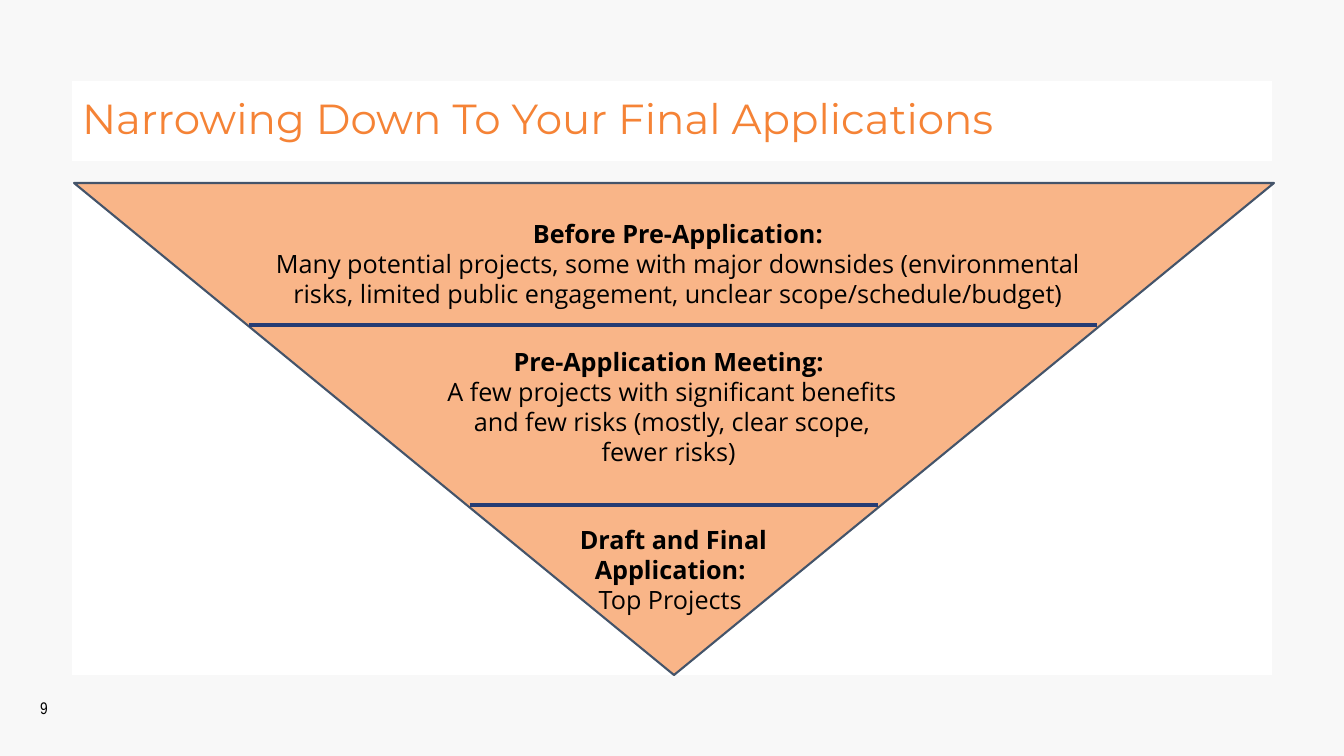
import dataclasses

import pptx
import pptx.dml.color
import pptx.enum.shapes
import pptx.enum.text
import pptx.oxml
import pptx.util

SHAPE = pptx.enum.shapes.MSO_SHAPE
ALIGN = pptx.enum.text.PP_ALIGN
ANCHOR = pptx.enum.text.MSO_ANCHOR
AUTO_SIZE = pptx.enum.text.MSO_AUTO_SIZE
EMU_PER_PX = 914400 / 100.8


@dataclasses.dataclass(frozen=True)
class Theme:
    """Colours, fonts and type sizes of the slide."""
    background: str = "F8F8F8"
    panel: str = "FFFFFF"
    heading: str = "F58336"
    funnel: str = "F9B588"
    funnel_edge: str = "44546A"
    divider: str = "263C74"
    ink: str = "000000"
    heading_font: str = "Montserrat"
    body_font: str = "Open Sans"
    number_font: str = "Arial Narrow"
    heading_size: int = 30
    body_size: int = 18
    number_size: int = 12
    edge_width: float = 1.5
    divider_width: float = 2.25


def px(*lengths):
    """Turn pixel lengths into EMU."""
    return [pptx.util.Emu(round(length * EMU_PER_PX)) for length in lengths]


def rgb(value):
    """Turn a hex string into a colour."""
    return pptx.dml.color.RGBColor.from_string(value)


class FunnelSlide:
    """Draws styled elements on the current slide."""

    def __init__(self, deck, theme):
        """Add a title-only slide with the theme background."""
        self.theme = theme
        self.slide = deck.slides.add_slide(deck.slide_layouts[5])
        self.paint(self.slide.background, theme.background)

    def paint(self, target, colour):
        """Fill a target with a solid colour."""
        target.fill.solid()
        target.fill.fore_color.rgb = rgb(colour)

    def add_words(self, paragraph, wording, font, size, colour, bold=False):
        """Add one formatted run."""
        run = paragraph.add_run()
        run.text = wording
        run.font.name = font
        run.font.size = pptx.util.Pt(size)
        run.font.bold = bold
        run.font.color.rgb = rgb(colour)

    def title(self, wording, *box):
        """Move and fill the title placeholder."""
        heading = self.slide.shapes.title
        heading.left, heading.top, heading.width, heading.height = px(*box)
        self.paint(heading, self.theme.panel)
        frame = heading.text_frame
        frame.auto_size = AUTO_SIZE.NONE
        frame.vertical_anchor = ANCHOR.MIDDLE
        line = frame.paragraphs[0]
        line.alignment = ALIGN.LEFT
        line.line_spacing = 0.9
        self.add_words(line, wording, self.theme.heading_font,
                       self.theme.heading_size, self.theme.heading)

    def shape(self, preset, colour, *box, edge=None, rotation=0):
        """Add a filled preset shape."""
        area = self.slide.shapes.add_shape(preset, *px(*box))
        area.shadow.inherit = False
        area.rotation = rotation
        self.paint(area, colour)
        if edge:
            area.line.color.rgb = rgb(edge)
            area.line.width = pptx.util.Pt(self.theme.edge_width)
        else:
            area.line.fill.background()

    def divider(self, left, right, y):
        """Add a horizontal line between two stages."""
        rule = self.slide.shapes.add_connector(
            pptx.enum.shapes.MSO_CONNECTOR.STRAIGHT, *px(left, y, right, y))
        rule.line.color.rgb = rgb(self.theme.divider)
        rule.line.width = pptx.util.Pt(self.theme.divider_width)
        properties = rule._element.spPr
        properties.append(pptx.oxml.parse_xml(
            '<a:effectLst xmlns:a='
            '"http://schemas.openxmlformats.org/drawingml/2006/main"/>'))

    def text_frame(self, box, auto_size, anchor):
        """Add a wrapping text box and return its frame."""
        frame = self.slide.shapes.add_textbox(*px(*box)).text_frame
        frame.word_wrap = True
        frame.auto_size = auto_size
        frame.vertical_anchor = anchor
        return frame

    def stage(self, name, detail, *box):
        """Add a stage name above its description."""
        frame = self.text_frame(box, AUTO_SIZE.SHAPE_TO_FIT_TEXT, ANCHOR.TOP)
        lines = [(frame.paragraphs[0], name, True),
                 (frame.add_paragraph(), detail, False)]
        for line, wording, bold in lines:
            line.alignment = ALIGN.CENTER
            self.add_words(line, wording, self.theme.body_font,
                           self.theme.body_size, self.theme.ink, bold)

    def page_number(self, number, *box):
        """Add the page number."""
        frame = self.text_frame(box, AUTO_SIZE.NONE, ANCHOR.MIDDLE)
        line = frame.paragraphs[0]
        line.alignment = ALIGN.CENTER
        self.add_words(line, number, self.theme.number_font,
                       self.theme.number_size, self.theme.ink)


def main():
    """Build and save the slide."""
    deck = pptx.Presentation()
    deck.slide_width, deck.slide_height = px(1344, 756)
    theme = Theme()
    page = FunnelSlide(deck, theme)
    page.page_number("9", 22, 688, 44, 40)
    page.title("Narrowing Down To Your Final Applications", 72, 81, 1200, 80)
    page.shape(SHAPE.RECTANGLE, theme.panel, 72, 183, 1200, 492)
    page.shape(SHAPE.ISOSCELES_TRIANGLE, theme.funnel, 74, 183, 1200, 492,
               edge=theme.funnel_edge, rotation=180)
    page.divider(249, 1097, 325)
    page.divider(470, 878, 505)
    page.stage("Before Pre-Application:",
               "Many potential projects, some with major downsides "
               "(environmental risks, limited public engagement, "
               "unclear scope/schedule/budget)", 249, 213, 858, 102)
    page.stage("Pre-Application Meeting: ",
               "A few projects with significant benefits and few risks "
               "(mostly, clear scope, fewer risks) ", 436, 341, 472, 132)
    page.stage("Draft and Final Application: ", "Top Projects ",
               530, 519, 287, 102)
    deck.save("out.pptx")


if __name__ == "__main__":
    main()
